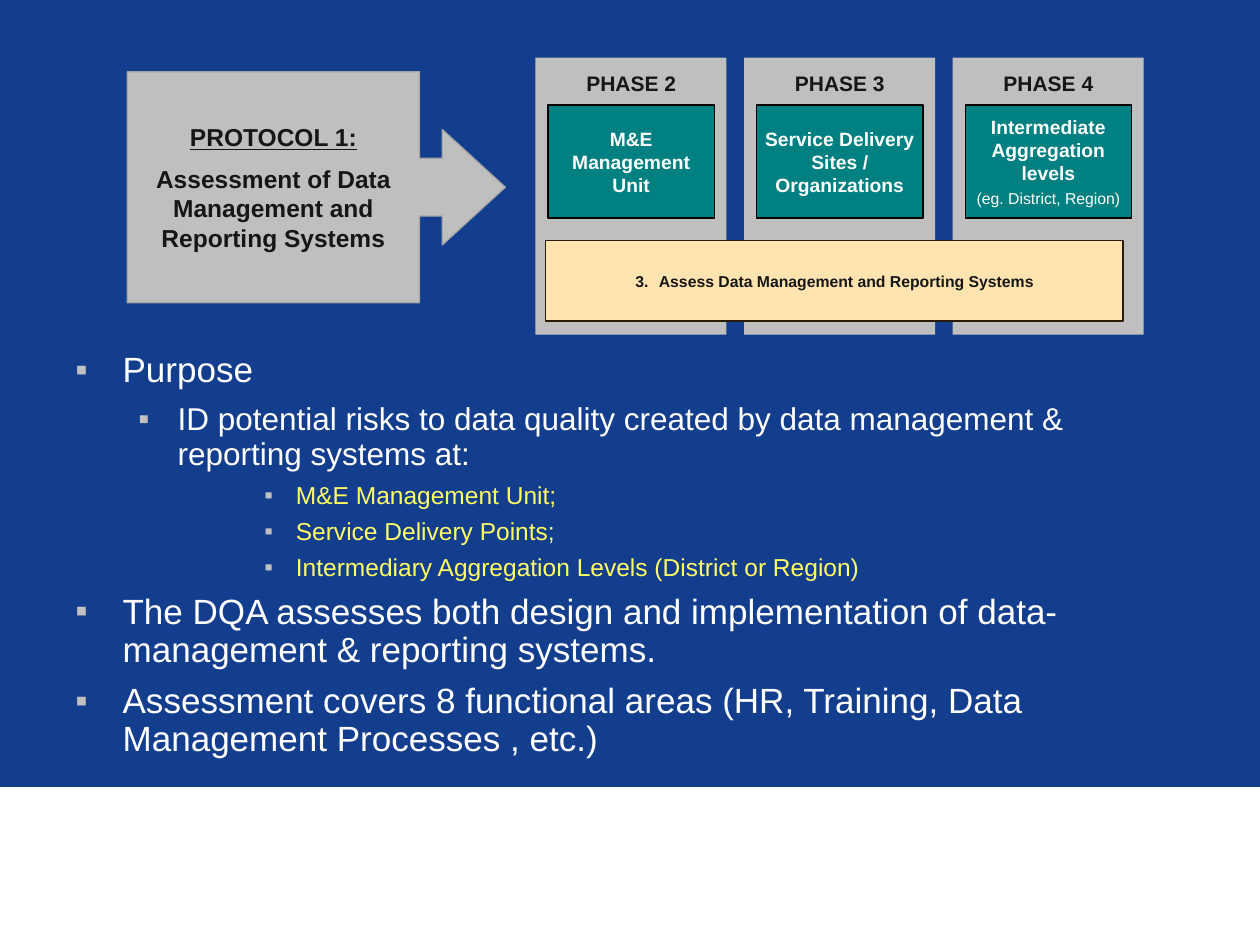
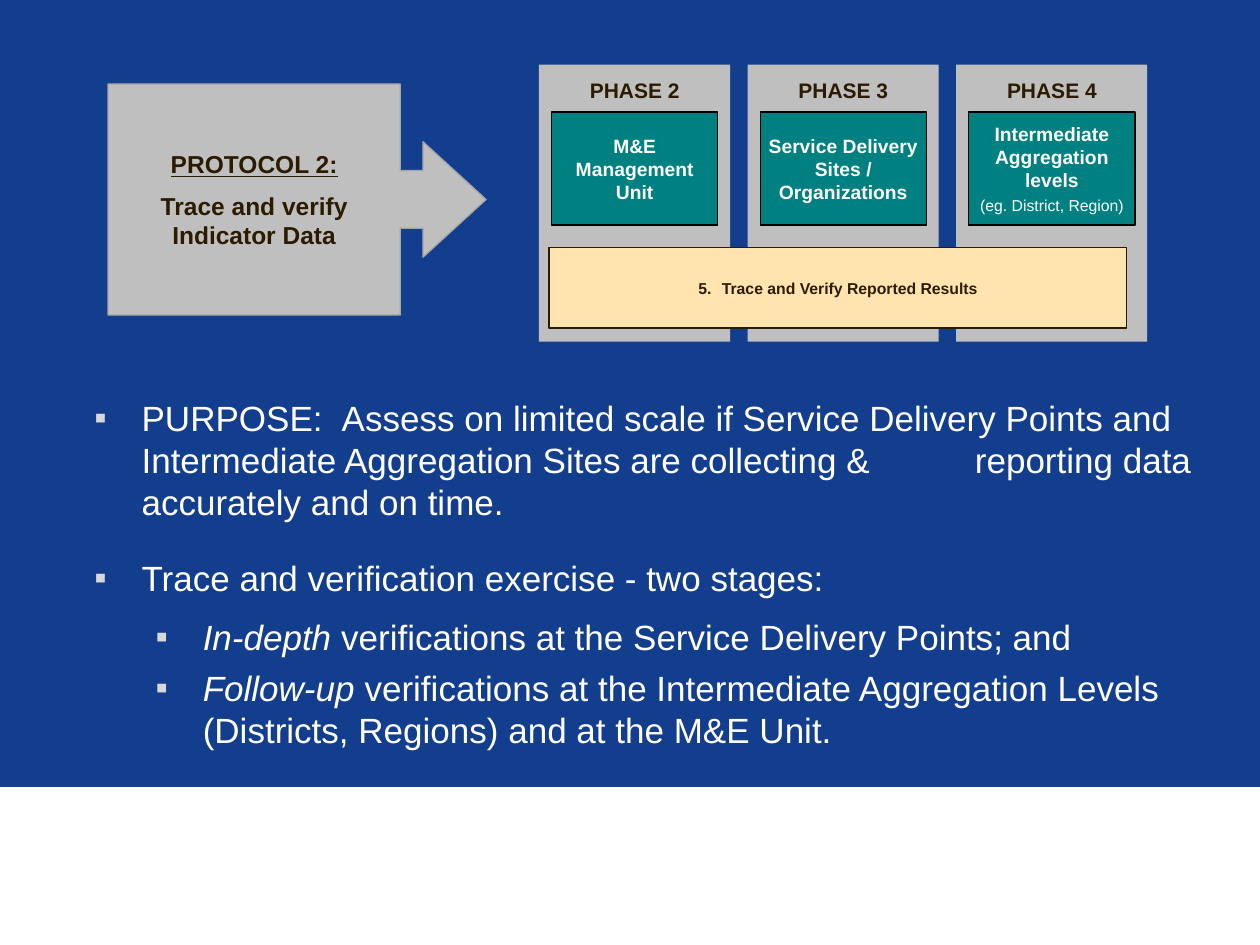
from lxml import etree
from pptx import Presentation
from pptx.dml.color import RGBColor
from pptx.enum.shapes import MSO_SHAPE
from pptx.enum.text import MSO_ANCHOR, PP_ALIGN
from pptx.oxml.ns import qn
from pptx.util import Pt

RECTANGLE = MSO_SHAPE.RECTANGLE
CALLOUT = MSO_SHAPE.RIGHT_ARROW_CALLOUT
MIDDLE = MSO_ANCHOR.MIDDLE
TOP = MSO_ANCHOR.TOP
CENTER = PP_ALIGN.CENTER
LEFT = PP_ALIGN.LEFT

FONT = "Arial"
BLUE = "133D8D"
WHITE = "FFFFFF"
BLACK = "000000"
GREY = "BFBFBF"
GREY_EDGE = "A5A5A5"
TEAL = "008080"
CREAM = "FFE4AF"
BROWN = "2B1C00"
INK = "161616"
YELLOW = "FFFF66"

PHASES = [
    ("PHASE 2", "M&E Management Unit", None),
    ("PHASE 3", "Service Delivery Sites / Organizations", None),
    ("PHASE 4", "Intermediate Aggregation levels", "(eg. District, Region)"),
]
PHASE_PITCH = 119.2


def color(hex_string):
    """Turn a hex string into a colour."""
    return RGBColor.from_string(hex_string)


class Deck:
    """Hold the presentation, its style and the current slide."""

    def __init__(self):
        """Start an empty presentation of 10 by 7.5 inches."""
        self.presentation = Presentation()
        self.presentation.slide_width = Pt(720)
        self.presentation.slide_height = Pt(540)
        self.slide = None

    def add_slide(self):
        """Add a blue slide with the white footer band."""
        self.slide = self.presentation.slides.add_slide(self.presentation.slide_layouts[6])
        fill = self.slide.background.fill
        fill.solid()
        fill.fore_color.rgb = color(BLUE)
        self.shape(0, 450, 720, 90, WHITE, WHITE)

    def shape(self, left, top, width, height, fill, line=None, kind=RECTANGLE):
        """Add a filled shape, outlined if a line colour is given."""
        shape = self.slide.shapes.add_shape(kind, Pt(left), Pt(top), Pt(width), Pt(height))
        shape.shadow.inherit = False
        shape.fill.solid()
        shape.fill.fore_color.rgb = color(fill)
        if line:
            shape.line.color.rgb = color(line)
            shape.line.width = Pt(0.75)
        else:
            shape.line.fill.background()
        return shape

    def text_box(self, left, top, width, height, wrap=True):
        """Add an empty text box."""
        box = self.slide.shapes.add_textbox(Pt(left), Pt(top), Pt(width), Pt(height))
        box.text_frame.word_wrap = wrap
        box.text_frame.vertical_anchor = TOP
        return box

    def paragraph(self, shape, text, size, ink, bold=False, underline=False, align=CENTER,
                  before=0, after=0, spacing=None, bullet=None, tabs=(), italic=""):
        """Write one paragraph, opening with the italic words if there are any."""
        frame = shape.text_frame
        paragraph = frame.paragraphs[0]
        if paragraph.runs:
            paragraph = frame.add_paragraph()
        paragraph.alignment = align
        paragraph.space_before = Pt(before)
        paragraph.space_after = Pt(after)
        if spacing:
            paragraph.line_spacing = spacing
        if bullet:
            self.bullet(paragraph, *bullet)
        if tabs:
            self.tab_stops(paragraph, tabs)
        if italic:
            run = paragraph.add_run()
            run.text = italic
            run.font.italic = True
        paragraph.add_run().text = text
        font = paragraph.font
        font.name = FONT
        font.size = Pt(size)
        font.bold = bold
        font.underline = underline
        font.color.rgb = color(ink)

    def bullet(self, paragraph, margin, hanging, mark_color=None, start=None):
        """Give a paragraph a square bullet, or a number if a start is given."""
        properties = paragraph._p.get_or_add_pPr()
        properties.set("marL", str(Pt(margin)))
        properties.set("indent", str(-Pt(hanging)))
        if start:
            etree.SubElement(properties, qn("a:buAutoNum"), type="arabicPeriod", startAt=str(start))
            return
        bullet_color = etree.SubElement(properties, qn("a:buClr"))
        etree.SubElement(bullet_color, qn("a:srgbClr"), val=mark_color)
        etree.SubElement(properties, qn("a:buFont"), typeface=FONT)
        etree.SubElement(properties, qn("a:buChar"), char="▪")

    def tab_stops(self, paragraph, positions):
        """Set left tab stops on a paragraph."""
        tab_list = etree.SubElement(paragraph._p.get_or_add_pPr(), qn("a:tabLst"))
        for position in positions:
            etree.SubElement(tab_list, qn("a:tab"), pos=str(Pt(position)), algn="l")

    def protocol(self, left, top, heading, name, ink):
        """Add the arrow callout that names the protocol."""
        callout = self.shape(left, top, 216, 132, GREY, GREY_EDGE, CALLOUT)
        for index, value in enumerate((0.25, 0.25, 0.273, 0.773)):
            callout.adjustments[index] = value
        callout.text_frame.vertical_anchor = MIDDLE
        self.paragraph(callout, heading, 14, ink, bold=True, underline=True, after=7)
        self.paragraph(callout, name, 14, ink, bold=True, after=7)

    def phases(self, left, top, step_number, step, ink):
        """Add the three phase panels and the step bar across them."""
        for index, (phase, level, example) in enumerate(PHASES):
            panel_left = left + index * PHASE_PITCH
            self.shape(panel_left, top, 109.2, 158.2, GREY)
            box = self.shape(panel_left + 7.2, top + 27, 95, 64.6, TEAL, BLACK)
            frame = box.text_frame
            frame.vertical_anchor = MIDDLE
            frame.margin_left = frame.margin_right = Pt(4)
            frame.margin_top = frame.margin_bottom = Pt(2)
            self.paragraph(box, level, 11, WHITE, bold=True, after=2.75 if example else 0)
            if example:
                self.paragraph(box, example, 9, WHITE)
            label = self.text_box(panel_left + 21.6, top + 4, 66.2, 21.6, wrap=False)
            self.paragraph(label, phase, 12, ink, bold=True)
        bar = self.shape(left + 5.8, top + 104.4, 330, 46, CREAM, BROWN)
        bar.text_frame.vertical_anchor = MIDDLE
        self.paragraph(bar, step, 9, ink, bold=True, bullet=(13.5, 13.5, None, step_number))


def add_assessment_slide(deck):
    """Build the slide on assessing data management systems."""
    deck.add_slide()
    deck.protocol(72.8, 41, "PROTOCOL 1:", "Assessment of Data Management and Reporting Systems", INK)
    deck.phases(306, 33, 3, "Assess Data Management and Reporting Systems", INK)
    body = deck.text_box(36, 198, 648, 288)
    main = (20, WHITE, 27, 27)
    risk = (18, WHITE, 58.5, 22.5)
    place = (14, YELLOW, 126, 18)
    lines = [
        (main, "Purpose"),
        (risk, "ID potential risks to data quality created by data management & reporting systems at:"),
        (place, "M&E Management Unit;"),
        (place, "Service Delivery Points;"),
        (place, "Intermediary Aggregation Levels (District or Region)"),
        (main, "The DQA assesses both design and implementation of data-management & reporting systems."),
        (main, "Assessment covers 8 functional areas (HR, Training, Data Management Processes , etc.)"),
    ]
    for index, ((size, ink, margin, hanging), text) in enumerate(lines):
        deck.paragraph(body, text, size, ink, align=LEFT, before=0.2 * size if index else 0,
                       after=0.2 * size, spacing=0.9, bullet=(margin, hanging, "C0C0C0"))


def add_verification_slide(deck):
    """Build the slide on tracing and verifying indicator data."""
    deck.add_slide()
    body = deck.text_box(46.8, 223.2, 642.2, 206)
    main = (27, 27, "D9D9D9")
    stage = (62, 27, "D9D9D9")
    purpose = ("PURPOSE:\tAssess on limited scale if Service Delivery Points and Intermediate "
               "Aggregation Sites are collecting &\treporting data accurately and on time.")
    lines = [
        ("", purpose, main, 0, 15, (141.4, 503.2)),
        ("", "Trace and verification exercise - two stages:", main, 4, 5, ()),
        ("In-depth", " verifications at the Service Delivery Points; and", stage, 5, 5, ()),
        ("Follow-up", " verifications at the Intermediate Aggregation Levels (Districts, Regions) "
         "and at the M&E Unit.", stage, 0, 0, ()),
    ]
    for italic, text, bullet, before, after, tabs in lines:
        deck.paragraph(body, text, 20, WHITE, align=LEFT, before=before, after=after,
                       bullet=bullet, tabs=tabs, italic=italic)
    deck.protocol(61.8, 48, "PROTOCOL 2:", "Trace and verify Indicator Data", BROWN)
    deck.phases(308, 37, 5, "Trace and Verify Reported Results", BROWN)


def main():
    """Build and save the presentation."""
    deck = Deck()
    add_assessment_slide(deck)
    add_verification_slide(deck)
    deck.presentation.save("out.pptx")


if __name__ == "__main__":
    main()
